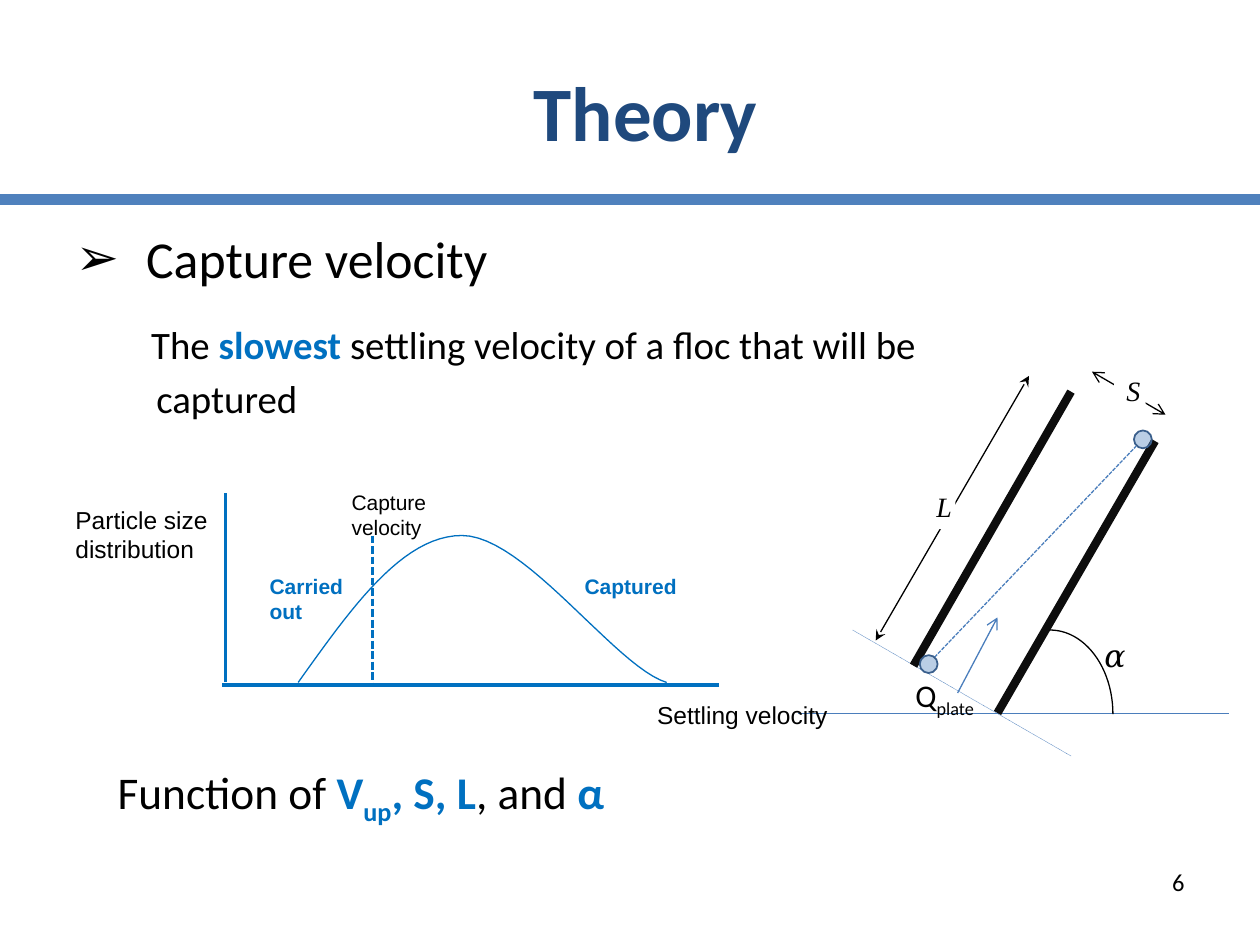
"""Build the Theory slide about capture velocity in a plate settler."""
from lxml.etree import SubElement
from pptx import Presentation
from pptx.dml.color import RGBColor
from pptx.enum.dml import MSO_LINE
from pptx.enum.shapes import MSO_CONNECTOR, MSO_SHAPE
from pptx.enum.text import MSO_ANCHOR, MSO_AUTO_SIZE, PP_ALIGN
from pptx.oxml.ns import qn
from pptx.util import Inches, Pt

COLORS = {"black": "000000", "white": "FFFFFF", "navy": "1F497D", "accent": "0070C0",
          "rule": "4F81BD", "thin": "4B7EBC", "plate": "0D0D0D", "rim": "3A5F8C"}

presentation = Presentation()
presentation.slide_width, presentation.slide_height = Inches(10), Inches(7.5)
slide = presentation.slides.add_slide(presentation.slide_layouts[3])
title, definition, function = list(slide.placeholders)[:3]
unit = presentation.slide_width / 120


def write_runs(paragraph, runs, size, font="Calibri"):
    for text, color, bold, baseline in runs:
        run = paragraph.add_run()
        run.text = text
        run.font.name, run.font.size, run.font.bold = font, Pt(size), bold
        run.font.color.rgb = RGBColor.from_string(COLORS[color])
        if baseline:
            run.font._element.set("baseline", str(baseline))


def draw_line(ends, color, width, dash=None, head=None, tail=None):
    connector = slide.shapes.add_connector(
        MSO_CONNECTOR.STRAIGHT, *[round(value * unit) for value in ends])
    connector.line.color.rgb = RGBColor.from_string(COLORS[color])
    connector.line.width = Pt(width)
    if dash:
        connector.line.dash_style = dash
    properties = connector._element.spPr
    for tag, kind in (("a:headEnd", head), ("a:tailEnd", tail)):
        if kind:
            SubElement(properties.find(qn("a:ln")), qn(tag), type=kind)
    SubElement(properties, qn("a:effectLst"))


for placeholder, box in ((title, (6, 3, 111, 15)), (definition, (6, 21, 110, 19)),
                         (function, (10, 72.2, 103, 8))):
    placeholder.left, placeholder.top, placeholder.width, placeholder.height = [
        round(value * unit) for value in box]
    placeholder.text_frame.auto_size = MSO_AUTO_SIZE.NONE
    placeholder.text_frame.word_wrap = True

title.text_frame.vertical_anchor = MSO_ANCHOR.MIDDLE
title_paragraph = title.text_frame.paragraphs[0]
title_paragraph.alignment = PP_ALIGN.CENTER
write_runs(title_paragraph, [("Theory", "navy", True, 0)], 44)
draw_line((0, 19, 120, 19), "rule", 6)

body_lines = [
    (definition, 0, "➢", 0.56, -0.56, 0, 29.6, [("Capture velocity", "black", False, 0)]),
    (definition, 1, None, 0.6, 0, 18, 22.2, [
        ("The ", "black", False, 0), ("slowest", "accent", True, 0),
        (" settling velocity of a floc that will be", "black", False, 0)]),
    (definition, 1, None, 0.64, 0, 4.4, 22.2, [("captured", "black", False, 0)]),
    (function, 0, None, 0, 0, 0, 25.9, [
        ("Function of ", "black", False, 0), ("V", "accent", True, 0),
        ("up", "accent", True, -25000), (", S, L", "accent", True, 0),
        (", and ", "black", False, 0), ("α", "accent", True, 0)]),
]
for placeholder, level, bullet, margin, indent, before, size, runs in body_lines:
    frame = placeholder.text_frame
    paragraph = frame.paragraphs[0] if not frame.paragraphs[0].runs else frame.add_paragraph()
    paragraph.level = level
    paragraph.space_before = Pt(before)
    properties = paragraph._p.get_or_add_pPr()
    properties.set("marL", str(Inches(margin)))
    properties.set("indent", str(Inches(indent)))
    if bullet:
        SubElement(properties, qn("a:buChar"), char=bullet)
    else:
        SubElement(properties, qn("a:buNone"))
    write_runs(paragraph, runs, size)

draw_line((68.5, 65.2, 21.1, 65.2), "accent", 2.25)
draw_line((35.5, 51, 35.5, 65.4), "accent", 1.5, MSO_LINE.SQUARE_DOT)
draw_line((21.5, 47, 21.5, 65), "accent", 2)

bezier_parts = [((28.4, 65), (33.4, 58), (38.3, 51), (44, 51)),
                ((44, 51), (50, 51), (58.6, 63.5), (63.5, 65))]
curve_points = []
for controls in bezier_parts:
    for step in range(25):
        t = step / 24
        weights = ((1 - t) ** 3, 3 * t * (1 - t) ** 2, 3 * t ** 2 * (1 - t), t ** 3)
        curve_points.append(tuple(
            round(unit * sum(weight * point[axis] for weight, point in zip(weights, controls)))
            for axis in (0, 1)))
builder = slide.shapes.build_freeform(*curve_points[0])
builder.add_line_segments(curve_points[1:], close=False)
distribution = builder.convert_to_shape()
distribution.shadow.inherit = False
distribution.fill.background()
distribution.line.color.rgb = RGBColor.from_string(COLORS["accent"])
distribution.line.width = Pt(0.75)

draw_line((98, 35.8, 83.4, 61), "black", 0.75, head="stealth", tail="stealth")
draw_line((76, 67.95, 117, 67.95), "thin", 0.25, MSO_LINE.ROUND_DOT)
draw_line((81.2, 60, 102, 72), "thin", 0.25, MSO_LINE.ROUND_DOT)
draw_line((110, 42, 95, 67.9), "plate", 4.75)
draw_line((102, 37.3, 87, 63.4), "plate", 4.75)
draw_line((104, 35.4, 111, 39.5), "black", 0.75, head="arrow", tail="arrow")
draw_line((91.2, 66, 95, 58.8), "thin", 0.75, tail="arrow")

angle = slide.shapes.add_shape(
    MSO_SHAPE.ARC, *[round(value * unit) for value in (94, 60, 12, 16)])
angle.shadow.inherit = False
angle.fill.background()
angle.line.color.rgb = RGBColor.from_string(COLORS["black"])
angle.line.width = Pt(0.75)

for symbol, left, top in (("L", 88, 46), ("S", 106.1, 35)):
    label = slide.shapes.add_shape(
        MSO_SHAPE.RECTANGLE, *[round(value * unit) for value in (left, top, 3, 4.4)])
    label.shadow.inherit = False
    label.fill.solid()
    label.fill.fore_color.rgb = RGBColor.from_string(COLORS["white"])
    label.line.fill.background()
    label.text_frame.vertical_anchor = MSO_ANCHOR.TOP
    paragraph = label.text_frame.paragraphs[0]
    paragraph.alignment = PP_ALIGN.LEFT
    write_runs(paragraph, [(symbol, "black", False, 0)], 16, "Times New Roman")
    paragraph.runs[0].font.italic = True

LEFT, RIGHT = PP_ALIGN.LEFT, PP_ALIGN.RIGHT
text_boxes = [
    ((61.4, 66.1, 22, 4.1), 14, "Arial", LEFT, [[("Settling velocity", "black", False, 0)]]),
    ((32.3, 46, 12.6, 6), 12, "Arial", LEFT,
     [[("Capture", "black", False, 0)], [("velocity", "black", False, 0)]]),
    ((6, 47.5, 16, 6.8), 14, "Arial", LEFT,
     [[("Particle size distribution", "black", False, 0)]]),
    ((24.5, 54, 11, 6), 12, "Arial", LEFT, [[("Carried out", "accent", True, 0)]]),
    ((54.5, 54, 13, 3.6), 12, "Arial", LEFT, [[("Captured", "accent", True, 0)]]),
    ((104, 60, 6, 5), 18, "Times New Roman", LEFT, [[("𝛼", "black", False, 0)]]),
    ((86, 63.8, 19, 4.8), 18, "Calibri", LEFT,
     [[("Q", "black", False, 0), ("plate", "black", False, -25000)]]),
    ((86, 82, 28, 6.2), 14, "Calibri", RIGHT, [[("6", "black", False, 0)]]),
]
for box, size, font, alignment, lines in text_boxes:
    frame = slide.shapes.add_textbox(*[round(value * unit) for value in box]).text_frame
    frame.word_wrap = True
    for index, runs in enumerate(lines):
        paragraph = frame.add_paragraph() if index else frame.paragraphs[0]
        paragraph.alignment = alignment
        write_runs(paragraph, runs, size, font)

draw_line((89, 62.6, 108.2, 42.5), "thin", 0.75, MSO_LINE.SQUARE_DOT)
for left, top in ((87.6, 62.4), (108, 41)):
    floc = slide.shapes.add_shape(
        MSO_SHAPE.OVAL, *[round(value * unit) for value in (left, top, 1.7, 1.7)])
    floc.shadow.inherit = False
    floc.fill.solid()
    floc.fill.fore_color.rgb = RGBColor.from_string(COLORS["rule"])
    fill_color = floc._element.spPr.find(qn("a:solidFill"))[0]
    SubElement(fill_color, qn("a:alpha"), val="39000")
    floc.line.color.rgb = RGBColor.from_string(COLORS["rim"])
    floc.line.width = Pt(1)

presentation.save("out.pptx")
